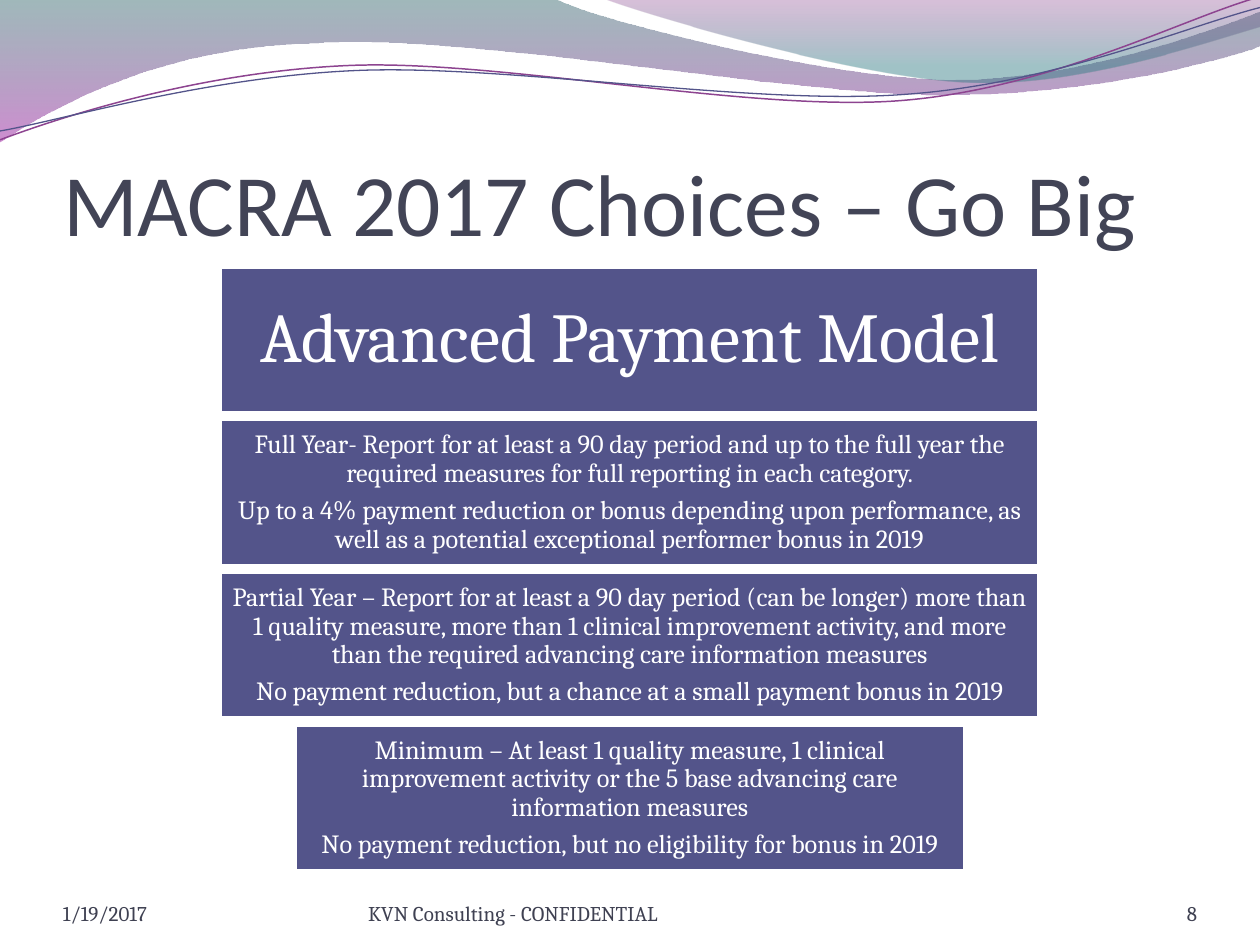
from math import cos, radians, sin
from lxml.etree import Element, SubElement
from pptx import Presentation
from pptx.dml.color import RGBColor
from pptx.enum.shapes import MSO_SHAPE as Shape
from pptx.enum.text import MSO_ANCHOR as Anchor, MSO_AUTO_SIZE as AutoSize, PP_ALIGN as Align
from pptx.oxml.ns import qn
from pptx.util import Cm, Pt

WHITE = RGBColor(0xFF, 0xFF, 0xFF)
INDIGO = RGBColor(0x53, 0x54, 0x8A)
PURPLE = RGBColor(0x8D, 0x44, 0x90)
SLATE = RGBColor(0x42, 0x44, 0x56)
FOOTER_GRAY = RGBColor(0x3F, 0x41, 0x52)
TEAL = RGBColor(0x2D, 0x63, 0x68)
MAGENTA = RGBColor(0xA5, 0x30, 0xA9)
PLUM = RGBColor(0x7F, 0x2F, 0x82)
SEA = RGBColor(0x2F, 0x7B, 0x82)

TITLE = "MACRA 2017 Choices – Go Big"
SLIDE_WIDTH, SLIDE_HEIGHT = 25.4, 19.05

BOXES = [
    (16.5, 40, 0.28, ["Advanced Payment Model"]),
    (16.5, 15, 0.1, [
        "Full Year- Report for at least a 90 day period and up to the full year the "
        "required measures for full reporting in each category.",
        "Up to a 4% payment reduction or bonus depending upon performance, as well as "
        "a potential exceptional performer bonus in 2019"]),
    (16.5, 15, 0.1, [
        "Partial Year – Report for at least a 90 day period (can be longer) more than "
        "1 quality measure, more than 1 clinical improvement activity, and more than "
        "the required advancing care information measures",
        "No payment reduction, but a chance at a small payment bonus in 2019"]),
    (13.49, 15, 0.1, [
        "Minimum – At least 1 quality measure, 1 clinical improvement activity or the "
        "5 base advancing care information measures",
        "No payment reduction, but no eligibility for bonus in 2019"]),
]
BOX_TOP, BOX_HEIGHT, BOX_PITCH = 5.38, 2.94, 3.08

FOOTERS = [
    (1.27, 5.92, "1/19/2017", Align.LEFT),
    (7.42, 9.32, "KVN Consulting - CONFIDENTIAL", Align.LEFT),
    (22.02, 2.11, "8", Align.RIGHT),
]

WAVE_UNIT = Cm(2.54)
WAVES = [
    ([(0, 0), (4.4, -0.01), (4.76, 0.17, 6.64, 0.63, 7.58, 0.63),
      (8.53, 0.63, 9.58, 0.26, 10, 0.09), (10.01, 0.36),
      (9.83, 0.44, 8.7, 0.76, 7.46, 0.75), (6.22, 0.75, 3.82, 0.28, 2.57, 0.34),
      (1.29, 0.36, 0.46, 0.83, -0.01, 1.13)],
     [(0, TEAL, 45), (1, MAGENTA, 55)]),
    ([(4.79, -0.01), (5.09, 0.11, 6.82, 0.62, 7.69, 0.65),
      (8.56, 0.69, 9.61, 0.32, 10, 0.21), (10, 0)],
     [(0, PLUM, 30), (0.8, SEA, 45)]),
]
STRAND_TILT = -2.7
STRANDS = [
    ([(0, 1.11), (0.48, 0.93, 1.58, 0.57, 2.77, 0.52),
      (3.95, 0.47, 5.93, 0.89, 7.13, 0.8), (8.33, 0.71, 9.38, 0.15, 9.98, -0.02)],
     (4.99, 0.57), PURPLE, 0.85),
    ([(0, 1.04), (0.47, 0.96, 1.64, 0.61, 2.83, 0.56),
      (4.03, 0.51, 5.97, 0.84, 7.17, 0.75), (8.36, 0.67, 9.41, 0.21, 10, 0.06)],
     (5, 0.59), INDIGO, 0.75),
]


def to_points(segment):
    return list(zip(segment[::2], segment[1::2]))


def turn(point, center, degrees):
    angle = radians(degrees)
    dx, dy = point[0] - center[0], point[1] - center[1]
    return (center[0] + dx * cos(angle) - dy * sin(angle),
            center[1] + dx * sin(angle) + dy * cos(angle))


def add_curve(slide, segments, close):
    scaled = [[(round(x * WAVE_UNIT), round(y * WAVE_UNIT)) for x, y in segment]
              for segment in segments]
    builder = slide.shapes.build_freeform(*scaled[0][0])
    builder.add_line_segments([segment[-1] for segment in scaled[1:]], close=close)
    shape = builder.convert_to_shape()
    shape.shadow.inherit = False
    lines = list(shape._element.iter(qn("a:lnTo")))
    for line, segment in zip(lines, scaled[1:]):
        if len(segment) == 3:
            curve = Element(qn("a:cubicBezTo"))
            for x, y in segment:
                SubElement(curve, qn("a:pt"), x=str(x - shape.left), y=str(y - shape.top))
            line.getparent().replace(line, curve)
    return shape


def add_wave(slide, segments, stops):
    shape = add_curve(slide, [to_points(segment) for segment in segments], True)
    shape.line.fill.background()
    shape.fill.gradient()
    shape.fill.gradient_angle = 270
    for stop, (position, color, _) in zip(shape.fill.gradient_stops, stops):
        stop.position = position
        stop.color.rgb = color
    for element, (_, _, opacity) in zip(shape._element.spPr.iter(qn("a:srgbClr")), stops):
        SubElement(element, qn("a:alpha")).set("val", str(opacity * 1000))


def add_strand(slide, segments, center, color, width):
    level = [[turn(point, center, -STRAND_TILT) for point in to_points(segment)]
             for segment in segments]
    shape = add_curve(slide, level, False)
    shape.rotation = STRAND_TILT
    shape.fill.background()
    shape.line.color.rgb = color
    shape.line.width = Pt(width)


def write(shape, paragraphs, size, color, font="Cambria", align=Align.LEFT,
          anchor=Anchor.BOTTOM, insets=(0, 0, 0, 0), line_spacing=1.0, space_after=0):
    frame = shape.text_frame
    frame.word_wrap = True
    frame.auto_size = AutoSize.NONE
    frame.vertical_anchor = anchor
    (frame.margin_left, frame.margin_top,
     frame.margin_right, frame.margin_bottom) = map(Cm, insets)
    for index, text in enumerate(paragraphs):
        paragraph = frame.add_paragraph() if index else frame.paragraphs[0]
        paragraph.alignment = align
        paragraph.line_spacing = line_spacing
        paragraph.space_before = Pt(0)
        paragraph.space_after = Pt(space_after)
        run = paragraph.add_run()
        run.text = text
        run.font.name = font
        run.font.size = Pt(size)
        run.font.color.rgb = color


def add_box(slide, row, width, size, inset, paragraphs):
    box = slide.shapes.add_shape(
        Shape.RECTANGLE, Cm((SLIDE_WIDTH - width) / 2), Cm(BOX_TOP + row * BOX_PITCH),
        Cm(width), Cm(BOX_HEIGHT))
    box.shadow.inherit = False
    box.fill.solid()
    box.fill.fore_color.rgb = INDIGO
    box.line.color.rgb = WHITE
    box.line.width = Pt(2)
    write(box, paragraphs, size, WHITE, align=Align.CENTER, anchor=Anchor.MIDDLE,
          insets=(inset,) * 4, line_spacing=0.9, space_after=size * 0.35)


def main():
    presentation = Presentation()
    presentation.slide_width, presentation.slide_height = Cm(SLIDE_WIDTH), Cm(SLIDE_HEIGHT)
    slide = presentation.slides.add_slide(presentation.slide_layouts[5])

    for wave in WAVES:
        add_wave(slide, *wave)
    for strand in STRANDS:
        add_strand(slide, *strand)

    title = slide.shapes.title
    title.left, title.top, title.width, title.height = Cm(1.27), Cm(1.96), Cm(22.86), Cm(3.17)
    write(title, [TITLE], 50, SLATE, font="Calibri", insets=(0, 0.13, 0, 0))

    for row, box in enumerate(BOXES):
        add_box(slide, row, *box)

    for left, width, text, align in FOOTERS:
        footer = slide.shapes.add_textbox(Cm(left), Cm(17.65), Cm(width), Cm(1.02))
        write(footer, [text], 12, FOOTER_GRAY, align=align)

    presentation.save("out.pptx")


if __name__ == "__main__":
    main()
